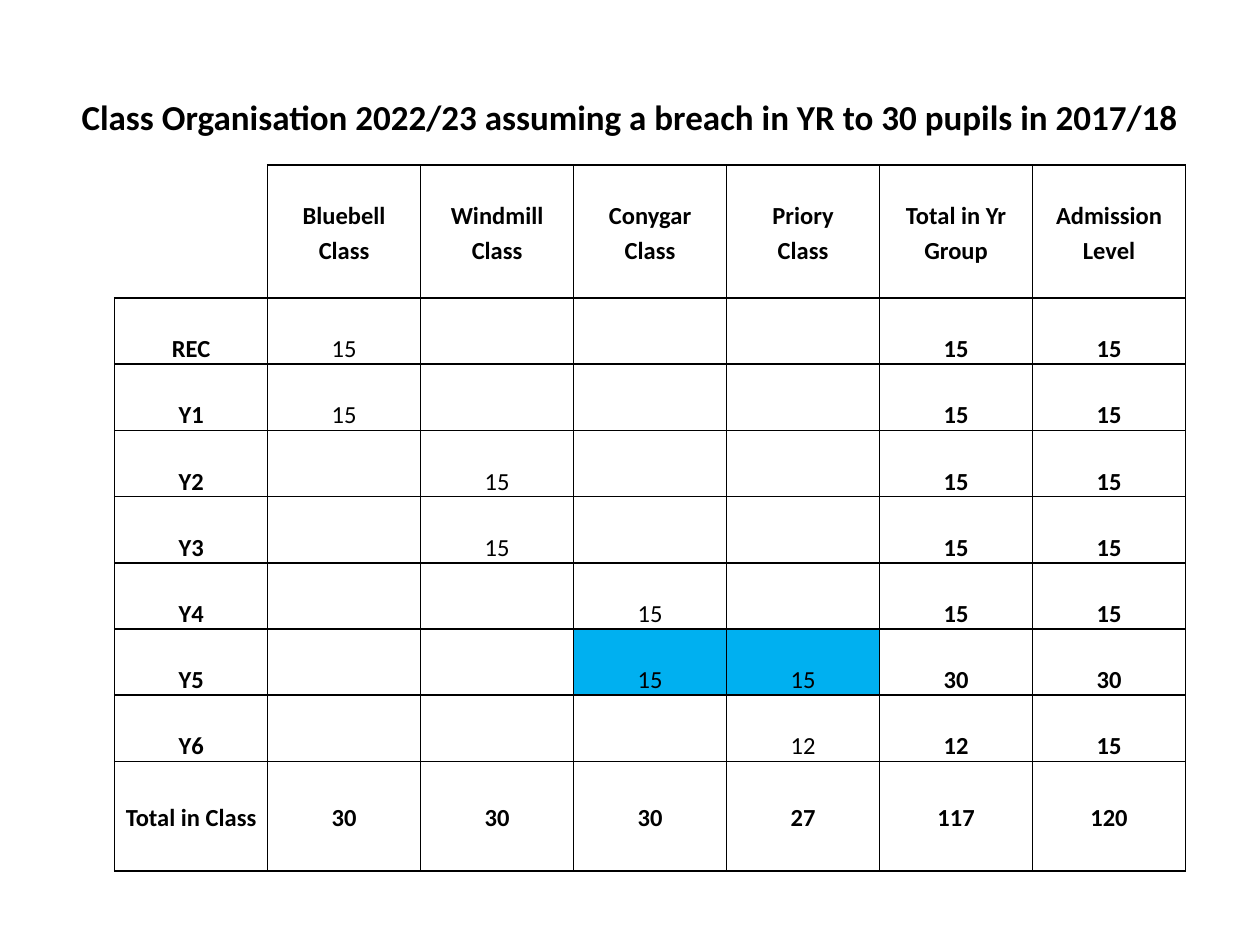
from lxml.etree import SubElement
from pptx import Presentation
from pptx.dml.color import RGBColor
from pptx.enum.text import MSO_ANCHOR as Anchor, PP_ALIGN as Align
from pptx.oxml.ns import qn
from pptx.util import Inches, Pt

BLACK, BLUE = "000000", "00B0F0"
PLAIN_STYLE = "{2D5ABB26-0587-4C30-8999-92F81FD0307C}"
HEADINGS = ["", "Bluebell Class", "Windmill Class", "Conygar Class",
            "Priory\nClass", "Total in Yr Group", "Admission Level"]
YEARS = [
    ["REC", "15", "", "", "", "15", "15"],
    ["Y1", "15", "", "", "", "15", "15"],
    ["Y2", "", "15", "", "", "15", "15"],
    ["Y3", "", "15", "", "", "15", "15"],
    ["Y4", "", "", "15", "", "15", "15"],
    ["Y5", "", "", "15", "15", "30", "30"],
    ["Y6", "", "", "", "12", "12", "15"],
]
TOTALS = ["Total in Class", "30", "30", "30", "27", "117", "120"]
BREACH_CELLS = {(7, 3), (7, 4)}


def rgb(value):
    """Return the colour of a hex string."""
    return RGBColor.from_string(value)


def write(tf, text, size=14, bold=True, color=BLACK, spacing=None):
    """Write centred text, one paragraph for each line."""
    for i, line in enumerate(text.split("\n")):
        p = tf.add_paragraph() if i else tf.paragraphs[0]
        p.alignment = Align.CENTER
        if spacing:
            p.line_spacing = spacing
        r = p.add_run()
        r.text = line
        r.font.name, r.font.size, r.font.bold = "Calibri", Pt(size), bold
        r.font.color.rgb = rgb(color)


def set_borders(cell, sides, color=BLACK, width=1):
    """Draw solid lines on the given sides (of LRTB) and none on the others."""
    tc_pr = cell._tc.get_or_add_tcPr()
    for side in "LRTB":
        ln = SubElement(tc_pr, qn(f"a:ln{side}"), w=str(Pt(width)))
        if side in sides:
            fill = SubElement(ln, qn("a:solidFill"))
            SubElement(fill, qn("a:srgbClr"), val=color)
        else:
            SubElement(ln, qn("a:noFill"))


def format_cell(cell, text, sides="LRTB", anchor=Anchor.MIDDLE, bold=True, fill=None):
    """Give a cell its borders, fill, margins and text."""
    set_borders(cell, sides)
    if fill:
        cell.fill.solid()
        cell.fill.fore_color.rgb = rgb(fill)
    else:
        cell.fill.background()
    cell.margin_left = cell.margin_right = Inches(0.07)
    cell.margin_top = cell.margin_bottom = 0
    cell.vertical_anchor = anchor
    if text:
        write(cell.text_frame, text, bold=bold, spacing=1.15)


def add_title(s, text, left, top, width, height):
    """Place and format the slide title."""
    sp = s.shapes.title
    sp.left, sp.top, sp.width, sp.height = map(Inches, (left, top, width, height))
    tf = sp.text_frame
    tf.word_wrap = True
    tf.vertical_anchor = Anchor.MIDDLE
    write(tf, text, size=20)


def add_class_table(s, left, top, width, height):
    """Add the table of pupils by year group and class."""
    rows = [HEADINGS, [""] * len(HEADINGS), *YEARS, TOTALS]
    last = len(rows) - 1
    table = s.shapes.add_table(len(rows), len(HEADINGS), *map(Inches, (left, top, width, height))).table
    table.first_row = table.horz_banding = False
    table._tbl.tblPr.find(qn("a:tableStyleId")).text = PLAIN_STYLE
    head, foot = 0.51, 0.87
    year = (height - 2 * head - foot) / len(YEARS)
    for row, size in zip(table.rows, [head] * 2 + [year] * len(YEARS) + [foot]):
        row.height = Inches(size)
    for column in table.columns:
        column.width = Inches(width / len(HEADINGS))
    for c in range(1, len(HEADINGS)):
        table.cell(0, c).merge(table.cell(1, c))
    corner = {(0, 0): "R", (1, 0): "RB"}
    for r, texts in enumerate(rows):
        is_year = 1 < r < last
        for c, text in enumerate(texts):
            format_cell(
                table.cell(r, c), text,
                sides=corner.get((r, c), "LRTB"),
                anchor=Anchor.BOTTOM if is_year else Anchor.MIDDLE,
                bold=not (is_year and 1 <= c <= 4),
                fill=BLUE if (r, c) in BREACH_CELLS else None,
            )


def main():
    """Build and save the slide."""
    prs = Presentation()
    prs.slide_width, prs.slide_height = Inches(10), Inches(7.5)
    s = prs.slides.add_slide(prs.slide_layouts[5])
    add_title(s, "Class Organisation 2022/23 assuming a breach in YR to 30 pupils in 2017/18",
              0.5, 0.3, 9, 1.25)
    add_class_table(s, 0.91, 1.31, 8.5, 5.57)
    prs.save("out.pptx")


if __name__ == "__main__":
    main()
